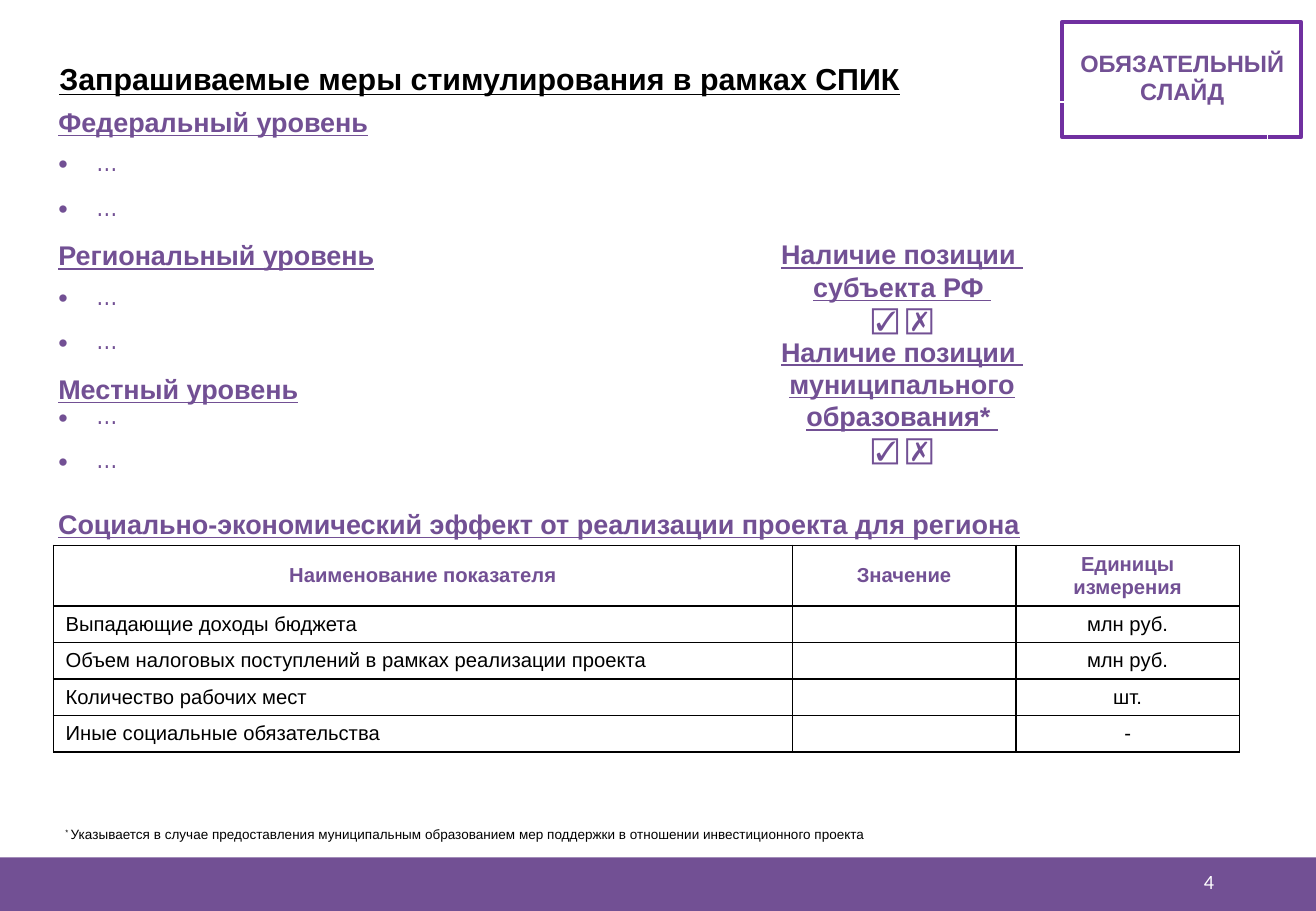
"""Build the slide on requested support measures."""
from dataclasses import dataclass

import pptx
import pptx.dml.color
import pptx.enum.shapes
import pptx.enum.text
import pptx.oxml
import pptx.oxml.ns
import pptx.util

Inches = pptx.util.Inches
Align = pptx.enum.text.PP_ALIGN
Anchor = pptx.enum.text.MSO_ANCHOR

PURPLE = "725094"
FRAME_PURPLE = "7030A0"
BLACK = "000000"
WHITE = "FFFFFF"
NAMESPACE = pptx.oxml.ns.nsdecls("a")


@dataclass(frozen=True)
class Style:
    size: float
    color: str = PURPLE
    bold: bool = False
    underline: bool = False
    name: str = "Arial"
    align: Align = Align.LEFT


@dataclass(frozen=True)
class Line:
    text: str
    style: Style
    bullet: bool = False


@dataclass(frozen=True)
class Label:
    left: float
    top: float
    width: float
    height: float
    lines: tuple[Line, ...]
    wrap: bool = True
    anchor: Anchor = Anchor.TOP


@dataclass(frozen=True)
class Grid:
    left: float
    top: float
    widths: tuple[float, ...]
    heights: tuple[float, ...]
    cells: tuple[tuple[tuple[Line, ...], ...], ...]
    bordered: bool = True


HEADING = Style(16, bold=True, underline=True)
CENTERED_HEADING = Style(16, bold=True, underline=True, align=Align.CENTER)
CHECKS = Style(16, bold=True, align=Align.CENTER)
BADGE = Style(14, bold=True, align=Align.CENTER)
COLUMN_HEAD = Style(12, bold=True, align=Align.CENTER)
INDICATOR = Style(12, BLACK)
UNIT = Style(12, BLACK, align=Align.CENTER)
FOOTNOTE = Style(8, BLACK, align=Align.JUSTIFY)

POINT = Line("…", Style(16, name="Arial Narrow"), bullet=True)
CHECK_LINE = Line("☑ ☒", CHECKS)


def indicator_row(name: str, unit: str) -> tuple[tuple[Line, ...], ...]:
    """Return the cells of one indicator with an empty value."""
    return (Line(name, INDICATOR),), (Line("", UNIT),), (Line(unit, UNIT),)


FEDERAL, REGIONAL, LOCAL = (
    Line(f"{level} уровень", HEADING)
    for level in ("Федеральный", "Региональный", "Местный")
)
LEVEL_ROWS = (
    (FEDERAL,), (POINT,), (POINT,),
    (REGIONAL,), (POINT,), (POINT,),
    (LOCAL, POINT), (POINT,), (Line("", HEADING),),
)
HEAD_ROW = tuple(
    (Line(text, COLUMN_HEAD),)
    for text in ("Наименование показателя", "Значение", "Единицы измерения")
)
INDICATOR_WIDTHS = (6.08, 1.84, 1.84)

GRIDS = (
    Grid(0.38, 0.84, (10.05,), (0.36, 0.37, 0.37) * 2 + (0.61, 0.37, 0.37),
         tuple((lines,) for lines in LEVEL_ROWS), bordered=False),
    Grid(0.44, 4.49, INDICATOR_WIDTHS, (0.5, 0.3, 0.3), (
        HEAD_ROW,
        indicator_row("Выпадающие доходы бюджета", "млн руб."),
        indicator_row("Объем налоговых поступлений в рамках реализации проекта", "млн руб."),
    )),
    Grid(0.44, 5.59, INDICATOR_WIDTHS, (0.3,),
         (indicator_row("Количество рабочих мест", "шт."),)),
    Grid(0.44, 5.89, INDICATOR_WIDTHS, (0.3,),
         (indicator_row("Иные социальные обязательства", "-"),)),
)

LABELS = (
    Label(7.65, 7.06, 2.44, 0.4,
          (Line("4", Style(12, WHITE, name="Calibri", align=Align.RIGHT)),), anchor=Anchor.MIDDLE),
    Label(0.39, 0.45, 7.91, 0.4, (
        Line("Запрашиваемые меры стимулирования в рамках СПИК",
             Style(18, BLACK, bold=True, underline=True)),
    )),
    Label(8.78, 0.35, 1.9, 0.57,
          (Line("ОБЯЗАТЕЛЬНЫЙ", BADGE), Line("СЛАЙД", BADGE)), wrap=False),
    Label(6.11, 1.91, 2.63, 1.99, (
        Line("Наличие позиции \vсубъекта РФ ", CENTERED_HEADING),
        CHECK_LINE,
        Line("Наличие позиции \vмуниципального образования* ", CENTERED_HEADING),
        CHECK_LINE,
    )),
    Label(0.38, 4.13, 10.05, 0.37, (
        Line("Социально-экономический эффект от реализации проекта для региона", HEADING),
    )),
)


def rgb(color: str) -> pptx.dml.color.RGBColor:
    """Turn a hex string into a colour."""
    return pptx.dml.color.RGBColor.from_string(color)


def write_lines(frame, lines: tuple[Line, ...]) -> None:
    """Fill a text frame with styled paragraphs."""
    for index, line in enumerate(lines):
        para = frame.add_paragraph() if index else frame.paragraphs[0]
        style = line.style
        para.text = line.text
        para.alignment = style.align
        para.font.size = pptx.util.Pt(style.size)
        para.font.name = style.name
        para.font.bold = style.bold
        para.font.underline = style.underline
        para.font.color.rgb = rgb(style.color)
        if line.bullet:
            properties = para._p.get_or_add_pPr()
            properties.set("marL", str(Inches(0.31)))
            properties.set("indent", str(-Inches(0.31)))
            properties.insert(0, pptx.oxml.parse_xml(f'<a:buChar {NAMESPACE} char="•"/>'))
            properties.insert(0, pptx.oxml.parse_xml(f'<a:buFont {NAMESPACE} typeface="Arial"/>'))
        if not line.text:
            para._p.append(pptx.oxml.parse_xml(f'<a:endParaRPr {NAMESPACE} sz="{style.size * 100}"/>'))


def add_label(page, label: Label):
    """Add a text box and return it."""
    box = page.shapes.add_textbox(*map(Inches, (label.left, label.top, label.width, label.height)))
    box.text_frame.word_wrap = label.wrap
    box.text_frame.vertical_anchor = label.anchor
    write_lines(box.text_frame, label.lines)
    return box


def add_grid(page, grid: Grid) -> None:
    """Add a table without fills, with black borders if wanted."""
    table = page.shapes.add_table(
        len(grid.heights), len(grid.widths), Inches(grid.left), Inches(grid.top),
        Inches(sum(grid.widths)), Inches(sum(grid.heights))).table
    table.first_row = table.horz_banding = False
    for column, width in zip(table.columns, grid.widths):
        column.width = Inches(width)
    for row, height, contents in zip(table.rows, grid.heights, grid.cells):
        row.height = Inches(height)
        for cell, lines in zip(row.cells, contents):
            write_lines(cell.text_frame, lines)
            if grid.bordered:
                cell.vertical_anchor = Anchor.MIDDLE
                for side in ("lnL", "lnR", "lnT", "lnB"):
                    cell._tc.get_or_add_tcPr().append(pptx.oxml.parse_xml(
                        f'<a:{side} {NAMESPACE} w="{pptx.util.Pt(1)}"><a:solidFill>'
                        f'<a:srgbClr val="{BLACK}"/></a:solidFill></a:{side}>'))
            cell.fill.background()


def add_rectangle(page, left: float, top: float, width: float, height: float):
    """Add a rectangle without shadow and return it."""
    shape = page.shapes.add_shape(pptx.enum.shapes.MSO_SHAPE.RECTANGLE,
                                  *map(Inches, (left, top, width, height)))
    shape.shadow.inherit = False
    return shape


def main() -> None:
    """Draw the slide and save the deck."""
    deck = pptx.Presentation()
    deck.slide_width, deck.slide_height = Inches(10.83), Inches(7.5)
    page = deck.slides.add_slide(deck.slide_layouts[6])
    footer = add_rectangle(page, 0, 7.06, 10.83, 0.44)
    footer.fill.solid()
    footer.fill.fore_color.rgb = rgb(PURPLE)
    footer.line.fill.background()
    frame = add_rectangle(page, 8.74, 0.18, 1.97, 0.95)
    frame.fill.background()
    frame.line.color.rgb = rgb(FRAME_PURPLE)
    frame.line.width = pptx.util.Pt(2.25)
    for grid in GRIDS:
        add_grid(page, grid)
    for label in LABELS:
        add_label(page, label)
    footnote = add_label(page, Label(0.44, 6.75, 10.02, 0.24, (Line("* ", FOOTNOTE),)))
    para = footnote.text_frame.paragraphs[0]
    para.runs[0].font._element.set("baseline", "30000")
    span = para.add_run()
    span.text = ("Указывается в случае предоставления муниципальным образованием "
                 "мер поддержки в отношении инвестиционного проекта")
    deck.save("out.pptx")


if __name__ == "__main__":
    main()
